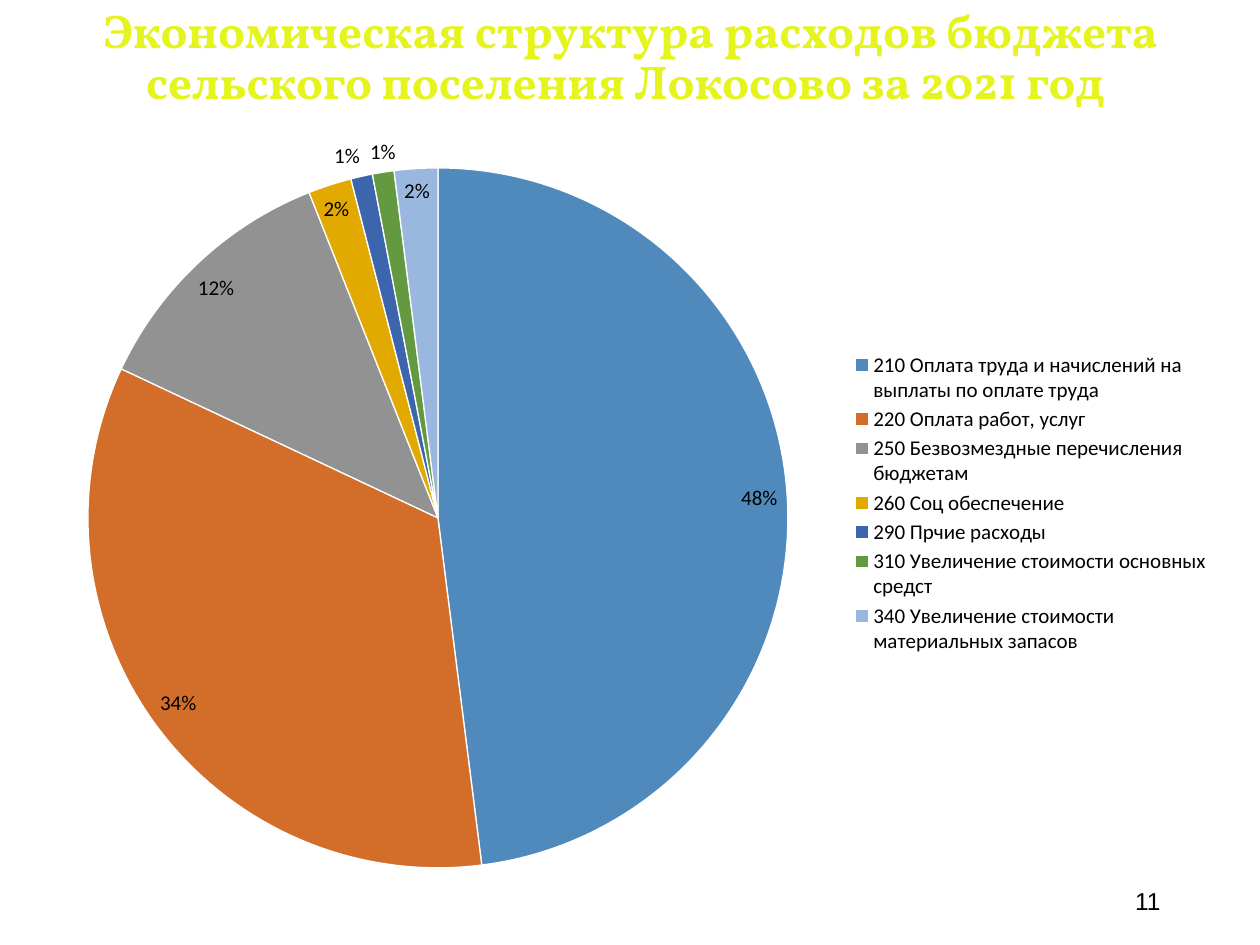
from typing import NamedTuple

from lxml.etree import SubElement
from pptx import Presentation
from pptx.chart.data import CategoryChartData
from pptx.dml.color import RGBColor
from pptx.enum.chart import XL_CHART_TYPE as ChartType
from pptx.enum.chart import XL_LABEL_POSITION as LabelPosition
from pptx.enum.chart import XL_LEGEND_POSITION as LegendPosition
from pptx.enum.text import MSO_ANCHOR as Anchor
from pptx.enum.text import PP_ALIGN as Align
from pptx.oxml.ns import qn
from pptx.util import Emu, Pt

PX_PER_INCH = 126
COLORS = {
    "title": "E5F41C", "text": "000000", "border": "FFFFFF",
    "blue": "508ABD", "orange": "D26E2A", "gray": "929292", "gold": "E2AA00",
    "navy": "3C65AE", "green": "639A3F", "pale": "9AB8DF",
}


class Rect(NamedTuple):
    left: int
    top: int
    width: int
    height: int


class Expense(NamedTuple):
    name: str
    percent: int
    color: str


EXPENSES = [
    Expense("210 Оплата труда и начислений на выплаты по оплате труда", 48, "blue"),
    Expense("220 Оплата работ, услуг", 34, "orange"),
    Expense("250 Безвозмездные перечисления бюджетам", 12, "gray"),
    Expense("260 Соц обеспечение", 2, "gold"),
    Expense("290 Прчие расходы", 1, "navy"),
    Expense("310 Увеличение стоимости основных средст", 1, "green"),
    Expense("340 Увеличение стоимости материальных запасов", 2, "pale"),
]
TITLE = Rect(63, 0, 1134, 118)
NUMBER = Rect(890, 876, 283, 50)
CHART = Rect(29, 118, 1191, 767)
PIE = Rect(88, 168, 700, 700)
LEGEND = Rect(848, 348, 366, 310)


def px(length: int) -> Emu:
    return Emu(round(length * 914400 / PX_PER_INCH))


def emu_rect(rect: Rect) -> list[Emu]:
    return [px(length) for length in rect]


def rgb(name: str) -> RGBColor:
    return RGBColor.from_string(COLORS[name])


def style_font(font, name: str, size: int, color: str, bold: bool = False) -> None:
    font.name, font.size, font.bold = name, Pt(size), bold
    font.color.rgb = rgb(color)


def write_text(box, text: str, align: Align):
    """Fill a box with one paragraph, centred vertically, and return it."""
    frame = box.text_frame
    frame.word_wrap = True
    frame.vertical_anchor = Anchor.MIDDLE
    para = frame.paragraphs[0]
    para.text = text
    para.alignment = align
    return para


def place_in_chart(element, after: str, rect: Rect, inner: bool = False) -> None:
    """Give a chart part a manual layout, as fractions of the chart area."""
    for old in element.findall(qn("c:layout")):
        element.remove(old)
    layout = SubElement(element, qn("c:layout"))
    if after:
        element.find(qn(after)).addnext(layout)
    else:
        element.insert(0, layout)
    manual = SubElement(layout, qn("c:manualLayout"))
    settings = {"layoutTarget": "inner"} if inner else {}
    settings |= {
        "xMode": "edge", "yMode": "edge",
        "x": round((rect.left - CHART.left) / CHART.width, 4),
        "y": round((rect.top - CHART.top) / CHART.height, 4),
        "w": round(rect.width / CHART.width, 4),
        "h": round(rect.height / CHART.height, 4),
    }
    for tag, value in settings.items():
        SubElement(manual, qn(f"c:{tag}")).set("val", str(value))


def add_expense_pie(page) -> None:
    data = CategoryChartData()
    data.categories = [expense.name for expense in EXPENSES]
    data.add_series("Series 1", [expense.percent for expense in EXPENSES])
    chart = page.shapes.add_chart(ChartType.PIE, *emu_rect(CHART), data).chart
    chart.has_title = False
    style_font(chart.font, "Calibri", 18, "text")

    chart.has_legend = True
    legend = chart.legend
    legend.position = LegendPosition.RIGHT
    legend.include_in_layout = False
    style_font(legend.font, "Calibri", 12, "text")

    plot = chart.plots[0]
    plot.vary_by_categories = True
    series = plot.series[0]
    for index, expense in enumerate(EXPENSES):
        look = series.points[index].format
        look.fill.solid()
        look.fill.fore_color.rgb = rgb(expense.color)
        look.line.color.rgb = rgb("border")
        look.line.width = Pt(0.75)

    labels = series.data_labels
    labels.show_value = False
    labels.show_percentage = True
    labels.number_format, labels.number_format_is_linked = "0%", False
    labels.position = LabelPosition.BEST_FIT
    style_font(labels.font, "Calibri", 12, "text")

    plot_area = chart.element.find(".//" + qn("c:plotArea"))
    place_in_chart(plot_area, "", PIE, inner=True)
    place_in_chart(chart.element.find(".//" + qn("c:legend")), "c:legendPos", LEGEND)


def main() -> None:
    deck = Presentation()
    deck.slide_width, deck.slide_height = px(1260), px(945)
    page = deck.slides.add_slide(deck.slide_layouts[5])

    title = page.shapes.title
    title.left, title.top, title.width, title.height = emu_rect(TITLE)
    para = write_text(
        title,
        "Экономическая структура расходов бюджета "
        "сельского поселения Локосово за 2021 год ",
        Align.CENTER,
    )
    para.line_spacing = 0.9
    style_font(para.font, "Vollkorn", 27, "title", bold=True)

    add_expense_pie(page)

    number = page.shapes.add_textbox(*emu_rect(NUMBER))
    para = write_text(number, "11", Align.RIGHT)
    style_font(para.font, "Arial", 14, "text")

    deck.save("out.pptx")


if __name__ == "__main__":
    main()
